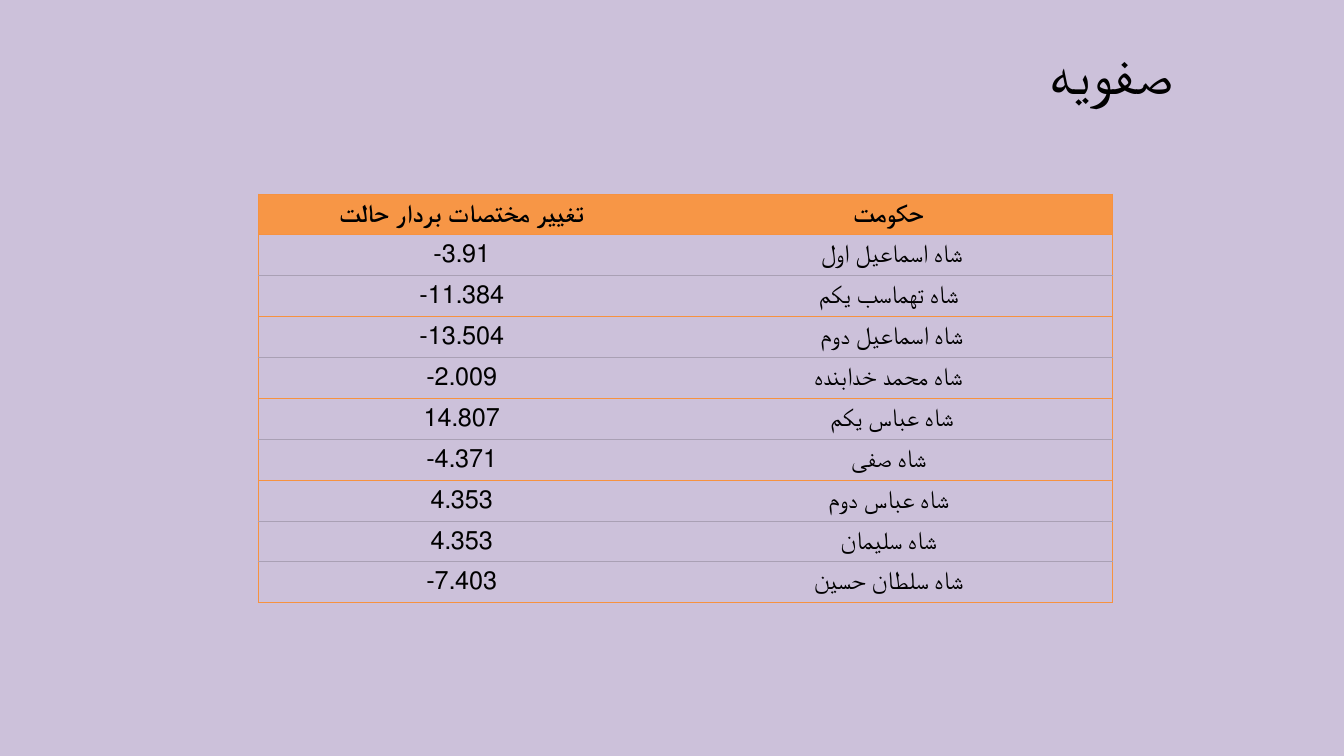
from pptx import Presentation
from pptx.dml.color import RGBColor
from pptx.enum.text import MSO_ANCHOR, PP_ALIGN
from pptx.oxml.ns import qn
from pptx.util import Pt
from lxml.etree import SubElement

LILAC = RGBColor(0xCC, 0xC1, 0xDA)
ORANGE = RGBColor(0xF7, 0x96, 0x46)
EDGE = RGBColor(0xF6, 0x92, 0x40)
GREY = RGBColor(0xA9, 0xA0, 0xB4)
BLACK = RGBColor(0, 0, 0)
PLAIN = "{2D5ABB26-0587-4C30-8999-92F81FD0307C}"  # no style, no grid


def write(frame, text, size, bold=False):
    para = frame.paragraphs[0]
    para.alignment = PP_ALIGN.CENTER
    para._p.get_or_add_pPr().set("rtl", "1")
    run = para.add_run()
    run.text = text
    run.font.name = "Calibri"
    run.font.size = Pt(size)
    run.font.bold = bold
    run.font.color.rgb = BLACK


def border(props, side, color):
    line = SubElement(props, qn("a:" + side), w=str(Pt(0.75)))
    fill = SubElement(line, qn("a:solidFill"))
    SubElement(fill, qn("a:srgbClr"), val=str(color))


deck = Presentation()
deck.slide_width, deck.slide_height = Pt(960), Pt(540)
slide = deck.slides.add_slide(deck.slide_layouts[6])
slide.background.fill.solid()
slide.background.fill.fore_color.rgb = LILAC

# Title
title = slide.shapes.add_textbox(Pt(627.8), Pt(0), Pt(332), Pt(99.4))
title.text_frame.word_wrap = True
title.text_frame.vertical_anchor = MSO_ANCHOR.MIDDLE
write(title.text_frame, "صفویه", 44)

# Table of reigns
rows = [
    ("تغییر مختصات بردار حالت", "حکومت"),
    ("3.91-", "شاه اسماعیل اول "),
    ("11.384-", "شاه تهماسب یکم"),
    ("13.504-", "شاه اسماعیل دوم "),
    ("2.009-", "شاه محمد خدابنده"),
    ("14.807", "شاه عباس یکم "),
    ("4.371-", "شاه صفی"),
    ("4.353", "شاه عباس دوم"),
    ("4.353", "شاه سلیمان"),
    ("7.403-", "شاه سلطان حسین"),
]
high = 29.2
table = slide.shapes.add_table(len(rows), 2, Pt(184.7), Pt(138.6),
                               Pt(610), Pt(high * len(rows))).table
table.first_row = table.horz_banding = False
table._tbl.tblPr.find(qn("a:tableStyleId")).text = PLAIN
table.columns[0].width, table.columns[1].width = Pt(290.2), Pt(319.8)

# Rules under the rows: grey under 1, 3, 5, 7 and 8, orange under the rest
rules = [GREY if i in (1, 3, 5, 7, 8) else EDGE for i in range(len(rows))]
for i, row in enumerate(rows):
    table.rows[i].height = Pt(high)
    for j, text in enumerate(row):
        cell = table.cell(i, j)
        cell.vertical_anchor = MSO_ANCHOR.MIDDLE
        write(cell.text_frame, text, 18, bold=i == 0)
        props = cell._tc.get_or_add_tcPr()
        border(props, ("lnL", "lnR")[j], EDGE)
        border(props, "lnT", rules[i - 1] if i else EDGE)
        border(props, "lnB", rules[i])
        if i == 0:
            cell.fill.solid()
            cell.fill.fore_color.rgb = ORANGE
        else:
            cell.fill.background()

deck.save("out.pptx")
